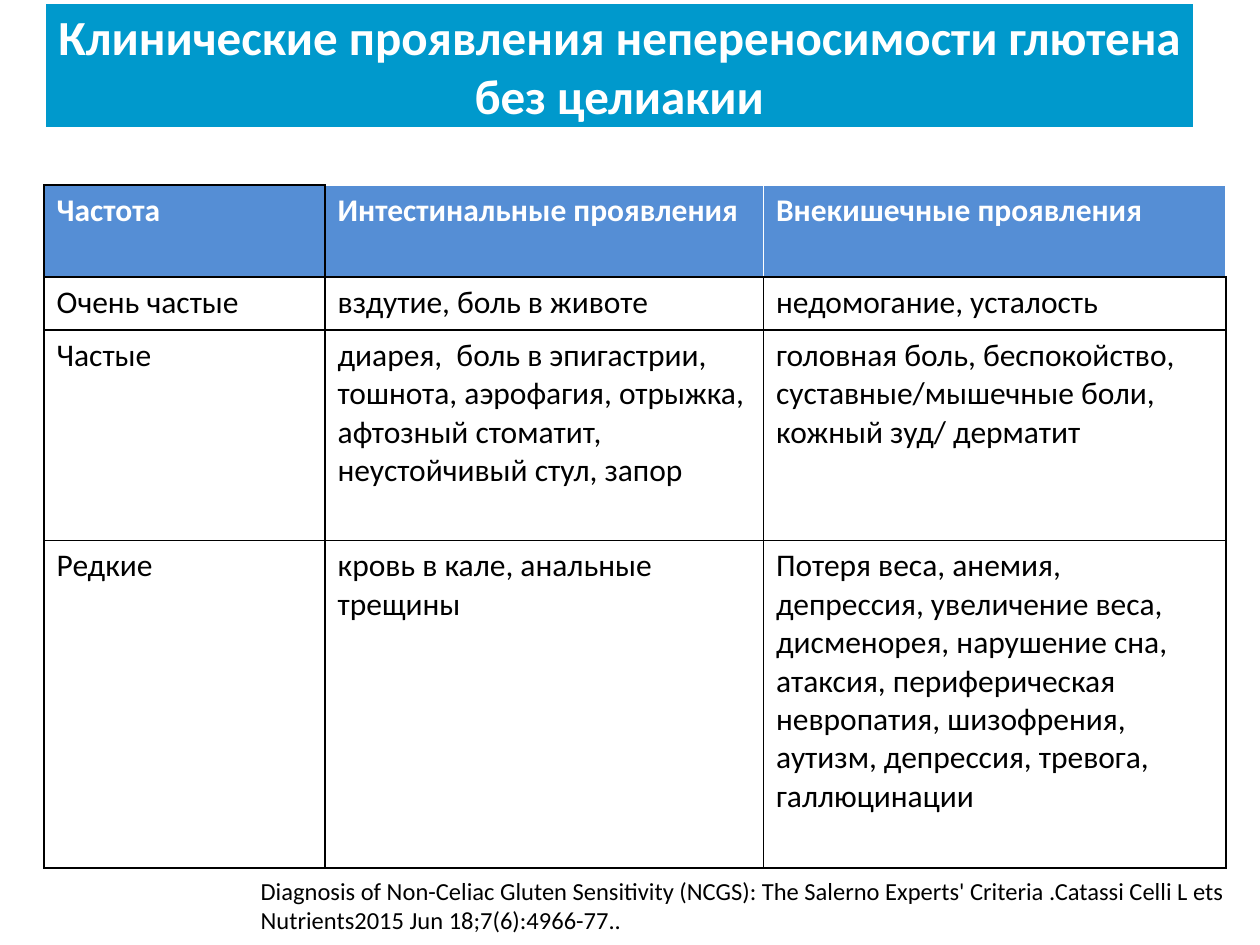
import pptx
import pptx.dml.color
import pptx.enum.text
import pptx.oxml
import pptx.oxml.ns
import pptx.util

COLUMNS, ROWS = 100, 75  # layout grid of the slide

HEADER = ["Частота", "Интестинальные проявления", "Внекишечные проявления"]
SYMPTOMS = [
    ["Очень частые", "вздутие, боль в животе", "недомогание, усталость"],
    ["Частые",
     "диарея,  боль в эпигастрии, тошнота, аэрофагия, отрыжка, "
     "афтозный стоматит, неустойчивый стул, запор",
     "головная боль, беспокойство, суставные/мышечные боли,\nкожный зуд/ дерматит"],
    ["Редкие", "кровь в кале, анальные трещины",
     "Потеря веса, анемия, депрессия, увеличение веса, дисменорея, "
     "нарушение сна, атаксия, периферическая невропатия, шизофрения, "
     "аутизм, депрессия, тревога, галлюцинации"],
]
REFERENCE = ("Diagnosis of Non-Celiac Gluten Sensitivity (NCGS): The Salerno Experts' "
             "Criteria .Catassi Celli L ets\nNutrients2015 Jun 18;7(6):4966-77..")


def color(value):
    return pptx.dml.color.RGBColor.from_string(value)


def fill_with(target, value):
    target.fill.solid()
    target.fill.fore_color.rgb = color(value)


class SlideBuilder:
    font_name = "Calibri"
    white, black = "FFFFFF", "000000"
    banner_color, header_color = "0099CC", "558ED5"

    def __init__(self, presentation):
        self.presentation = presentation
        self.slide = presentation.slides.add_slide(presentation.slide_layouts[5])

    def across(self, columns):
        return round(self.presentation.slide_width * columns / COLUMNS)

    def down(self, rows):
        return round(self.presentation.slide_height * rows / ROWS)

    def box(self, left, top, width, height):
        return self.across(left), self.down(top), self.across(width), self.down(height)

    def set_text(self, text_frame, text, size, text_color, bold=False, alignment=None):
        text_frame.text = text
        font_format = {"name": self.font_name, "size": pptx.util.Pt(size), "bold": bold}
        for paragraph in text_frame.paragraphs:
            paragraph.alignment = alignment
            for run in paragraph.runs:
                for name, value in font_format.items():
                    setattr(run.font, name, value)
                run.font.color.rgb = color(text_color)

    def title(self, text, *place):
        """Turn the title placeholder into a rounded banner."""
        title = self.slide.shapes.title
        for name, value in zip(("left", "top", "width", "height"), self.box(*place)):
            setattr(title, name, value)
        geometry = pptx.oxml.parse_xml(
            f'<a:prstGeom {pptx.oxml.ns.nsdecls("a")} prst="roundRect"><a:avLst/></a:prstGeom>')
        title.element.spPr.insert(1, geometry)
        fill_with(title, self.banner_color)
        title.line.color.rgb = color(self.white)
        title.line.width = pptx.util.Pt(2)
        self.set_text(title.text_frame, text, 28, self.white, True,
                      pptx.enum.text.PP_ALIGN.CENTER)
        frame_format = {"word_wrap": True,
                        "auto_size": pptx.enum.text.MSO_AUTO_SIZE.NONE,
                        "vertical_anchor": pptx.enum.text.MSO_ANCHOR.MIDDLE}
        for name, value in frame_format.items():
            setattr(title.text_frame, name, value)

    def borders(self, cell, **sides):
        """Draw one-point borders, black unless a side (L, R, T, B) names a colour."""
        properties = cell._tc.get_or_add_tcPr()
        for position, side in enumerate("LRTB"):
            properties.insert(position, pptx.oxml.parse_xml(
                f'<a:ln{side} {pptx.oxml.ns.nsdecls("a")} w="{pptx.util.Pt(1)}">'
                f'<a:solidFill><a:srgbClr val="{sides.get(side, self.black)}"/></a:solidFill>'
                f'</a:ln{side}>'))

    def table(self, header, body, left, top, widths, heights):
        place = self.box(left, top, sum(widths), sum(heights))
        table = self.slide.shapes.add_table(len(heights), len(widths), *place).table
        table.horz_banding = False
        for column, width in zip(table.columns, widths):
            column.width = self.across(width)
        for row, height in zip(table.rows, heights):
            row.height = self.down(height)
        for row_index, texts in enumerate([header] + body):
            is_header = row_index == 0
            for column_index, text in enumerate(texts):
                cell = table.cell(row_index, column_index)
                self.set_text(cell.text_frame, text, 18,
                              self.white if is_header else self.black, is_header)
                if is_header:
                    fill_with(cell, self.header_color)
                else:
                    cell.fill.background()
                sides = {}
                if is_header and column_index > 0:
                    sides = {"T": self.white, "R": self.white}
                    if column_index > 1:
                        sides["L"] = self.white
                self.borders(cell, **sides)

    def note(self, text, *place):
        text_frame = self.slide.shapes.add_textbox(*self.box(*place)).text_frame
        text_frame.word_wrap = False
        self.set_text(text_frame, text, 14, self.black)


def main():
    presentation = pptx.Presentation()
    presentation.slide_width = pptx.util.Inches(10)
    presentation.slide_height = pptx.util.Inches(7.5)
    builder = SlideBuilder(presentation)
    builder.title("Клинические проявления непереносимости глютена без целиакии",
                  3.5, 0.2, 91.3, 10)
    builder.table(HEADER, SYMPTOMS, 3.5, 14.7,
                  widths=[22.3, 34.8, 36.7], heights=[7.3, 4.2, 16.7, 26])
    builder.note(REFERENCE, 19.7, 69, 81.2, 8.8)
    presentation.save("out.pptx")


if __name__ == "__main__":
    main()
